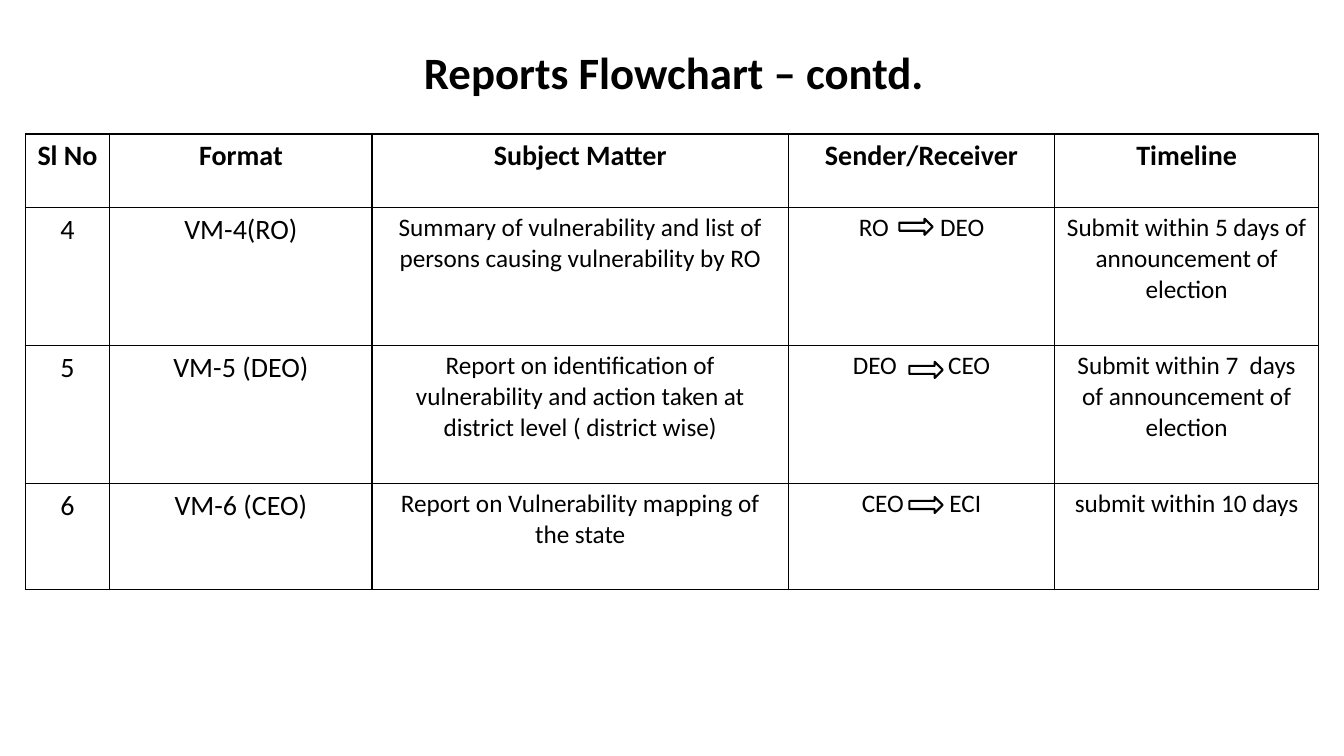
"""Build the slide that lists reports, their senders and their deadlines."""
from lxml.etree import SubElement
from pptx import Presentation
from pptx.dml.color import RGBColor
from pptx.enum.shapes import MSO_SHAPE
from pptx.enum.text import PP_ALIGN
from pptx.oxml import parse_xml
from pptx.oxml.ns import nsdecls, qn
from pptx.util import Inches, Pt

theme = {
    "font": "Calibri",
    "ink": RGBColor.from_string("000000"),
    "title": 32,
    "head": 20,
    "body": 18,
    "rule": 1,
    "arrow": 1.5,
}


def style(para, size, bold=False):
    para.alignment = PP_ALIGN.CENTER
    font = para.font
    font.name, font.size, font.bold = theme["font"], Pt(size), bold
    font.color.rgb = theme["ink"]


def border(cell):
    props = cell._tc.get_or_add_tcPr()
    for spot, side in enumerate(("lnL", "lnR", "lnT", "lnB")):
        line = parse_xml(f'<a:{side} {nsdecls("a")} w="{Pt(theme["rule"])}"/>')
        fill = SubElement(line, qn("a:solidFill"))
        SubElement(fill, qn("a:srgbClr"), val=str(theme["ink"]))
        props.insert(spot, line)


deck = Presentation()
deck.slide_width, deck.slide_height = Inches(13.33), Inches(7.5)
slide = deck.slides.add_slide(deck.slide_layouts[6])

cols = [0.84, 2.6, 4.13, 2.64, 2.62]
rows = [0.73, 1.37, 1.37, 1.05]
left, top = 0.25, 1.33
wide = sum(cols)

heads = ["Sl No", "Format", "Subject Matter", "Sender/Receiver", "Timeline"]
reports = [
    ["4", "VM-4(RO)",
     "Summary of vulnerability and list of persons causing vulnerability by RO",
     ("RO", "DEO"), "Submit within 5 days of announcement of election"],
    ["5", "VM-5 (DEO)",
     "Report on identification of vulnerability and action taken at district level ( district wise)",
     ("DEO", "CEO"), "Submit within 7  days of announcement of election"],
    ["6", "VM-6 (CEO)", "Report on Vulnerability mapping of the state",
     ("CEO", "ECI"), "submit within 10 days"],
]
gaps = [32.5, 32.5, 28.5]
shifts = [(1.1, 0.11), (1.2, 0.16), (1.2, 0.13)]

frame = slide.shapes.add_table(
    len(rows), len(cols), Inches(left), Inches(top), Inches(wide), Inches(sum(rows)))
table = frame.table
table.first_row = table.horz_banding = False
for col, width in zip(table.columns, cols):
    col.width = Inches(width)
for row, height in zip(table.rows, rows):
    row.height = Inches(height)

for r, texts in enumerate([heads] + reports):
    for c, text in enumerate(texts):
        cell = table.cell(r, c)
        cell.fill.background()
        border(cell)
        para = cell.text_frame.paragraphs[0]
        style(para, theme["head"] if r == 0 or c < 2 else theme["body"], r == 0)
        if isinstance(text, str):
            para.add_run().text = text
            continue
        for part in (text[0], " ", text[1]):
            run = para.add_run()
            run.text = part
            if part == " ":
                run.font._element.set("spc", str(int(gaps[r - 1] * 100)))

for r, (dx, dy) in enumerate(shifts, 1):
    arrow = slide.shapes.add_shape(
        MSO_SHAPE.RIGHT_ARROW, Inches(left + sum(cols[:3]) + dx),
        Inches(top + sum(rows[:r]) + dy), Inches(0.33), Inches(0.16))
    arrow.shadow.inherit = False
    arrow.fill.background()
    arrow.line.color.rgb = theme["ink"]
    arrow.line.width = Pt(theme["arrow"])

title = slide.shapes.add_textbox(Inches(0.27), Inches(0.39), Inches(wide), Inches(0.64))
title.text_frame.word_wrap = True
para = title.text_frame.paragraphs[0]
style(para, theme["title"], True)
para.add_run().text = "Reports Flowchart – contd."

deck.save("out.pptx")
